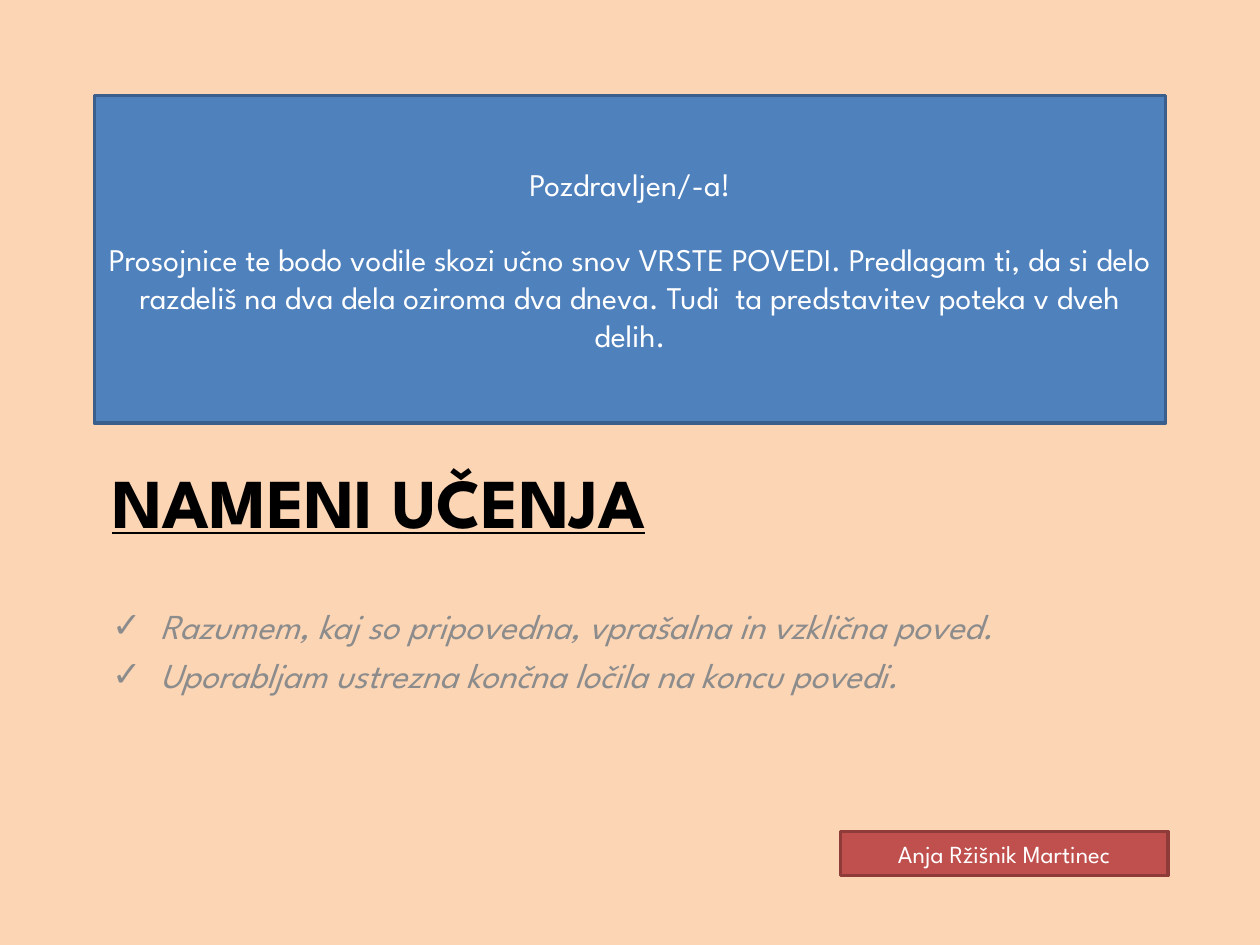
from lxml.etree import SubElement
from pptx import Presentation
from pptx.dml.color import RGBColor
from pptx.enum.shapes import MSO_SHAPE as SHAPE
from pptx.enum.text import MSO_ANCHOR as ANCHOR, MSO_AUTO_SIZE as AUTOSIZE, PP_ALIGN as ALIGN
from pptx.oxml.ns import qn
from pptx.util import Inches, Pt

PEACH = RGBColor(0xFC, 0xD5, 0xB5)
BLUE = RGBColor(0x4F, 0x81, 0xBD)
DARK_BLUE = RGBColor(0x3A, 0x5F, 0x8C)
RED = RGBColor(0xC0, 0x50, 0x4D)
DARK_RED = RGBColor(0x8E, 0x3B, 0x39)
GRAY = RGBColor(0x8C, 0x8C, 0x8C)
BLACK = RGBColor(0, 0, 0)
WHITE = RGBColor(0xFF, 0xFF, 0xFF)

FONT = "League Spartan"
SECTION_HEADER = 2
WIDTH, HEIGHT = 10, 7.5
GREETING = (
    "Pozdravljen/-a!",
    "Prosojnice te bodo vodile skozi učno snov VRSTE POVEDI. Predlagam ti, da si delo "
    "razdeliš na dva dela oziroma dva dneva. Tudi  ta predstavitev poteka v dveh delih.",
)
GOALS = (
    "Razumem, kaj so pripovedna, vprašalna in vzklična poved.",
    "Uporabljam ustrezna končna ločila na koncu povedi.",
)


def place(shape, left, top, width, height):
    shape.left, shape.top = Inches(left), Inches(top)
    shape.width, shape.height = Inches(width), Inches(height)


def write(shape, *lines, size, color, align=ALIGN.LEFT, anchor=ANCHOR.MIDDLE,
          gap=0, bold=False, italic=False, underline=False):
    """Fill a shape with paragraphs of one format; gap separates them in points."""
    frame = shape.text_frame
    frame.text = "\n".join(lines)
    frame.word_wrap = True
    frame.auto_size = AUTOSIZE.NONE
    frame.vertical_anchor = anchor
    for number, paragraph in enumerate(frame.paragraphs):
        paragraph.alignment = align
        paragraph.space_before = Pt(gap if number else 0)
        font = paragraph.runs[0].font
        font.name, font.size = FONT, Pt(size)
        font.bold, font.italic, font.underline = bold, italic, underline
        font.color.rgb = color
    return frame


def add_checkmarks(frame, indent):
    for paragraph in frame.paragraphs:
        properties = paragraph._p.get_or_add_pPr()
        properties.set("marL", str(Inches(indent)))
        properties.set("indent", str(-Inches(indent)))
        SubElement(properties, qn("a:buChar"), char="✓")


def add_panel(slide, box, fill, border, *lines, **text_format):
    panel = slide.shapes.add_shape(SHAPE.RECTANGLE, *map(Inches, box))
    panel.shadow.inherit = False
    panel.fill.solid()
    panel.fill.fore_color.rgb = fill
    panel.line.color.rgb = border
    panel.line.width = Pt(2)
    write(panel, *lines, color=WHITE, align=ALIGN.CENTER, **text_format)


def main():
    deck = Presentation()
    deck.slide_width, deck.slide_height = Inches(WIDTH), Inches(HEIGHT)
    slide = deck.slides.add_slide(deck.slide_layouts[SECTION_HEADER])
    slide.background.fill.solid()
    slide.background.fill.fore_color.rgb = PEACH

    # Heading and learning goals
    heading, goals = slide.placeholders
    place(heading, 0.79, 3.59, 8.5, 2.72)
    write(heading, "NAMENI UČENJA", size=40, color=BLACK, anchor=ANCHOR.TOP,
          bold=True, underline=True)
    place(goals, 0.79, 3.18, 8.5, 2.78)
    goals_frame = write(goals, *GOALS, size=20, color=GRAY, anchor=ANCHOR.BOTTOM,
                        gap=4, italic=True)
    goals_frame.margin_bottom = Inches(0.44)
    add_checkmarks(goals_frame, indent=0.38)

    # Author and greeting
    add_panel(slide, (6.67, 6.6, 2.6, 0.35), RED, DARK_RED,
              "Anja Ržišnik Martinec", size=14)
    add_panel(slide, (0.75, 0.76, 8.5, 2.6), BLUE, DARK_BLUE,
              *GREETING, size=18, gap=21.5)

    deck.save("out.pptx")


if __name__ == "__main__":
    main()
